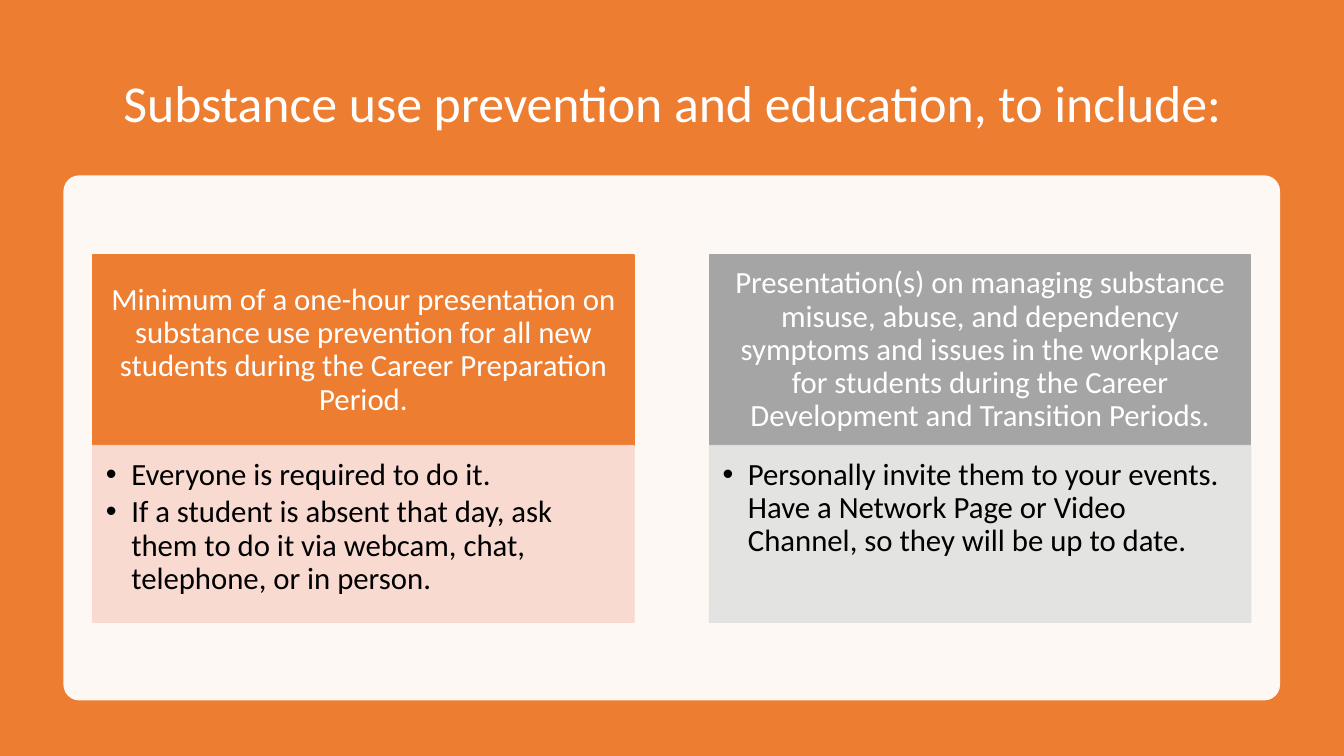
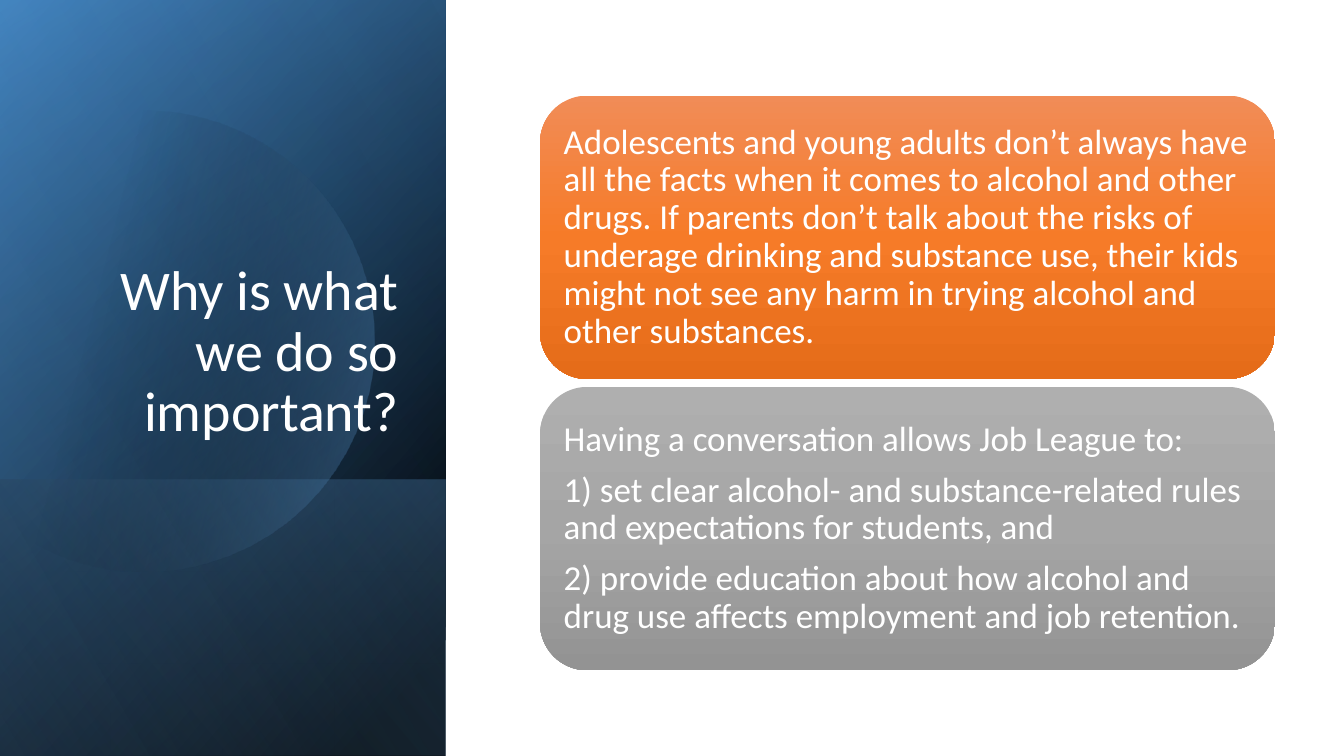
from dataclasses import dataclass

from lxml import etree
from pptx import Presentation
from pptx.dml.color import RGBColor
from pptx.enum.shapes import MSO_SHAPE
from pptx.enum.text import MSO_ANCHOR, PP_ALIGN
from pptx.oxml.ns import qn
from pptx.util import Cm, Pt

RECT, ROUND = MSO_SHAPE.RECTANGLE, MSO_SHAPE.ROUNDED_RECTANGLE
TOP, MIDDLE, BOTTOM = MSO_ANCHOR.TOP, MSO_ANCHOR.MIDDLE, MSO_ANCHOR.BOTTOM
LEFT, CENTER, RIGHT = PP_ALIGN.LEFT, PP_ALIGN.CENTER, PP_ALIGN.RIGHT

# Shared style
FONT = "Calibri"
WHITE, BLACK, ORANGE, GRAY = "FFFFFF", "000000", "ED7D31", "A5A5A5"
BLUE, NAVY, SKY = "5B9BD5", "2E75B6", "9DC3E6"
WIDTH, HEIGHT = 33.87, 19.05


@dataclass
class Box:
    x: float
    y: float
    w: float
    h: float


@dataclass
class Style:
    size: float
    color: str = WHITE
    align: PP_ALIGN = LEFT
    anchor: MSO_ANCHOR = MIDDLE
    after: float = 0
    inset: tuple = (0.25, 0.13, 0.25, 0.13)
    bullet: bool = False


@dataclass
class Stop:
    pos: int
    color: str
    alpha: int = 100


@dataclass
class Column:
    head: str
    notes: list
    fill: str
    tint: str


@dataclass
class Card:
    lines: list
    shades: tuple


@dataclass
class Layer:
    box: Box
    stops: list
    angle: int


# Drawing tools
def rgb(color: str) -> RGBColor:
    return RGBColor.from_string(color)


def cms(box: Box) -> tuple:
    return tuple(Cm(v) for v in (box.x, box.y, box.w, box.h))


def fade(node, alpha: int) -> None:
    """Set the opacity of every colour below a node."""
    if alpha < 100:
        for item in list(node.iter(qn("a:srgbClr"))):
            etree.SubElement(item, qn("a:alpha")).set("val", str(alpha * 1000))


def plain(shape) -> None:
    shape.shadow.inherit = False
    shape.line.fill.background()


def tint(shape, color: str, alpha: int = 100, edge: bool = False) -> None:
    shape.fill.solid()
    shape.fill.fore_color.rgb = rgb(color)
    if edge:
        shape.line.color.rgb = rgb(color)
        shape.line.width = Pt(1)
    fade(shape.fill._xPr, alpha)


def blend(shape, stops: list, angle: int) -> None:
    """Fill a shape with a linear gradient."""
    shape.fill.solid()
    old = shape.fill._xPr.find(qn("a:solidFill"))
    grad = etree.Element(qn("a:gradFill"), rotWithShape="1")
    row = etree.SubElement(grad, qn("a:gsLst"))
    for stop in stops:
        mark = etree.SubElement(row, qn("a:gs"), pos=str(stop.pos * 1000))
        etree.SubElement(mark, qn("a:srgbClr"), val=stop.color)
        fade(mark, stop.alpha)
    etree.SubElement(grad, qn("a:lin"), ang=str(angle * 60000), scaled="0")
    old.getparent().replace(old, grad)


def add(slide, kind: MSO_SHAPE, box: Box):
    shape = slide.shapes.add_shape(kind, *cms(box))
    plain(shape)
    return shape


def write(shape, lines: list, style: Style) -> None:
    frame = shape.text_frame
    frame.word_wrap = True
    frame.vertical_anchor = style.anchor
    (frame.margin_left, frame.margin_top,
     frame.margin_right, frame.margin_bottom) = (Cm(v) for v in style.inset)
    frame.text = "\n".join(lines)
    for para in frame.paragraphs:
        para.alignment = style.align
        para.line_spacing = 0.9
        para.space_after = Pt(style.after)
        if style.bullet:
            props = para._p.get_or_add_pPr()
            props.set("marL", str(Cm(0.64)))
            props.set("indent", str(-Cm(0.64)))
            etree.SubElement(props, qn("a:buFont"), typeface="Arial")
            etree.SubElement(props, qn("a:buChar"), char="•")
        for run in para.runs:
            run.font.name = FONT
            run.font.size = Pt(style.size)
            run.font.color.rgb = rgb(style.color)


def title(slide, text: str, box: Box, style: Style) -> None:
    write(slide.shapes.add_textbox(*cms(box)), [text], style)


def curve(start: tuple, one: tuple, two: tuple, end: tuple) -> list:
    """Points along a cubic curve, without its start."""
    steps = 16
    points = []
    for step in range(1, steps + 1):
        t = step / steps
        parts = ((1 - t) ** 3, 3 * t * (1 - t) ** 2, 3 * t * t * (1 - t), t ** 3)
        points.append(tuple(
            max(0, sum(k * p[axis] for k, p in zip(parts, (start, one, two, end))))
            for axis in (0, 1)))
    return points


# Slide 1: two columns on a pale panel
COLUMNS = [
    Column("Minimum of a one-hour presentation on substance use prevention for "
           "all new students during the Career Preparation Period.",
           ["Everyone is required to do it.",
            "If a student is absent that day, ask them to do it via webcam, chat, "
            "telephone, or in person."],
           ORANGE, "F8D7CE"),
    Column("Presentation(s) on managing substance misuse, abuse, and dependency "
           "symptoms and issues in the workplace for students during the Career "
           "Development and Transition Periods.",
           ["Personally invite them to your events. Have a Network Page or Video "
            "Channel, so they will be up to date."],
           GRAY, "E1E1E1"),
]
HEAD = Style(22, align=CENTER, after=8, inset=(0.43, 0.25, 0.43, 0.25))
NOTE = Style(22, BLACK, anchor=TOP, after=3, inset=(0.33, 0.33, 0.43, 0.48),
             bullet=True)


def draw_plan(slide) -> None:
    slide.background.fill.solid()
    slide.background.fill.fore_color.rgb = rgb(ORANGE)
    title(slide, "Substance use prevention and education, to include:",
          Box(2.34, 1.27, 29.21, 2.79), Style(37, align=CENTER))
    panel = add(slide, ROUND, Box(1.6, 4.42, 30.66, 13.23))
    panel.adjustments[0] = 0.03
    tint(panel, WHITE, 95)
    for i, col in enumerate(COLUMNS):
        x = 2.34 + 15.54 * i
        head = add(slide, RECT, Box(x, 6.43, 13.64, 4.8))
        tint(head, col.fill, edge=True)
        write(head, [col.head], HEAD)
        body = add(slide, RECT, Box(x, 11.23, 13.64, 4.45))
        tint(body, col.tint, 90, edge=True)
        write(body, col.notes, NOTE)


# Slide 2: shaded side panel and two cards
SIDE = Box(0, 0, 11.23, HEIGHT)
BASE = Box(0, 12.09, 11.23, HEIGHT - 12.09)
UNDER = [
    Layer(SIDE, [Stop(8, BLACK), Stop(100, NAVY)], 220),
    Layer(SIDE, [Stop(0, BLACK, 0), Stop(99, BLUE, 46)], 240),
    Layer(BASE, [Stop(2, BLUE, 29), Stop(100, BLACK, 30)], 140),
]
OVER = Layer(SIDE, [Stop(0, BLACK, 0), Stop(99, SKY, 11)], 150)
ARCS = [
    ((3.78, 2.79), (6.25, 2.84), (8.51, 4.5), (9.22, 6.99)),
    ((9.22, 6.99), (10.11, 10.08), (8.33, 13.29), (5.26, 14.17)),
    ((5.26, 14.17), (3.33, 14.73), (1.35, 14.25), (0, 13.06)),
    ((0, 4.09), (0.58, 3.61), (1.27, 3.25), (2.03, 3.02)),
    ((2.03, 3.02), (2.62, 2.87), (3.2, 2.79), (3.78, 2.79)),
]
CARDS = [
    Card(["Adolescents and young adults don’t always have all the facts when it "
          "comes to alcohol and other drugs. If parents don’t talk about the risks "
          "of underage drinking and substance use, their kids might not see any "
          "harm in trying alcohol and other substances."],
         ("F18C57", "F67B28", "E56C19")),
    Card(["Having a conversation allows Job League to:",
          "1) set clear alcohol- and substance-related rules and expectations for "
          "students, and",
          "2) provide education about how alcohol and drug use affects employment "
          "and job retention."],
         ("AFAFAF", GRAY, "939393")),
]


def draw_layer(slide, layer: Layer) -> None:
    blend(add(slide, RECT, layer.box), layer.stops, layer.angle)


def draw_disc(slide) -> None:
    points = [ARCS[0][0]]
    for arc in ARCS:
        if points[-1] != arc[0]:
            points.append(arc[0])
        points += curve(*arc)
    spots = [(Cm(x), Cm(y)) for x, y in points]
    maker = slide.shapes.build_freeform(*spots[0])
    maker.add_line_segments(spots[1:], close=True)
    disc = maker.convert_to_shape()
    plain(disc)
    blend(disc, [Stop(29, BLACK, 0), Stop(100, BLUE, 43)], 14)


def draw_cause(slide) -> None:
    for layer in UNDER:
        draw_layer(slide, layer)
    draw_disc(slide)
    draw_layer(slide, OVER)
    title(slide, "Why is what we do so important?", Box(1.63, 4.67, 8.66, 6.65),
          Style(40, align=RIGHT, anchor=BOTTOM))
    for i, card in enumerate(CARDS):
        shape = add(slide, ROUND, Box(13.61, 2.41 + 7.34 * i, 18.52, 7.14))
        stops = [Stop(50 * k, shade) for k, shade in enumerate(card.shades)]
        blend(shape, stops, 90)
        write(shape, card.lines, Style(25, after=9, inset=(0.25,) * 4))


def main() -> None:
    deck = Presentation()
    deck.slide_width, deck.slide_height = Cm(WIDTH), Cm(HEIGHT)
    for draw in (draw_plan, draw_cause):
        draw(deck.slides.add_slide(deck.slide_layouts[6]))
    deck.save("out.pptx")


if __name__ == "__main__":
    main()
